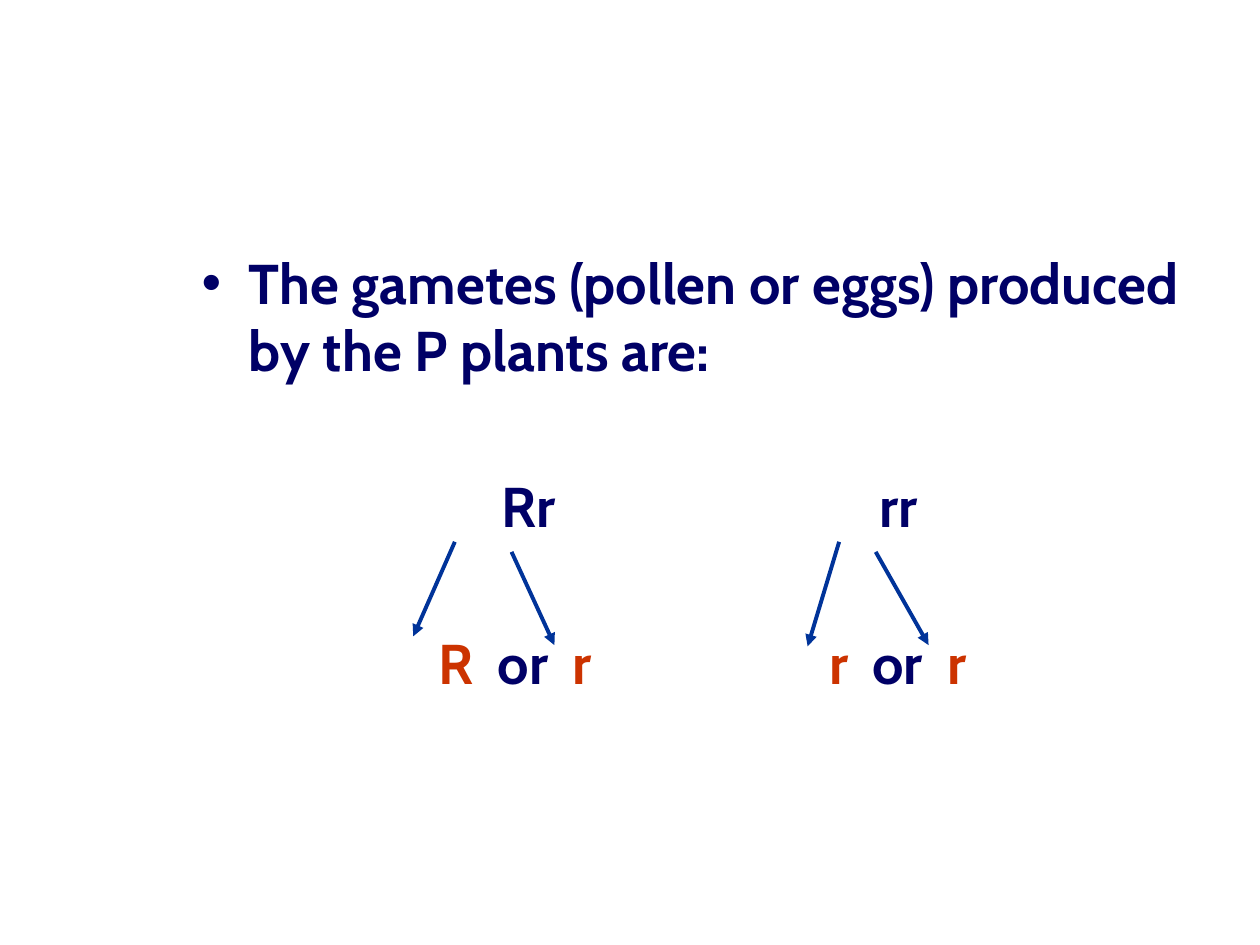
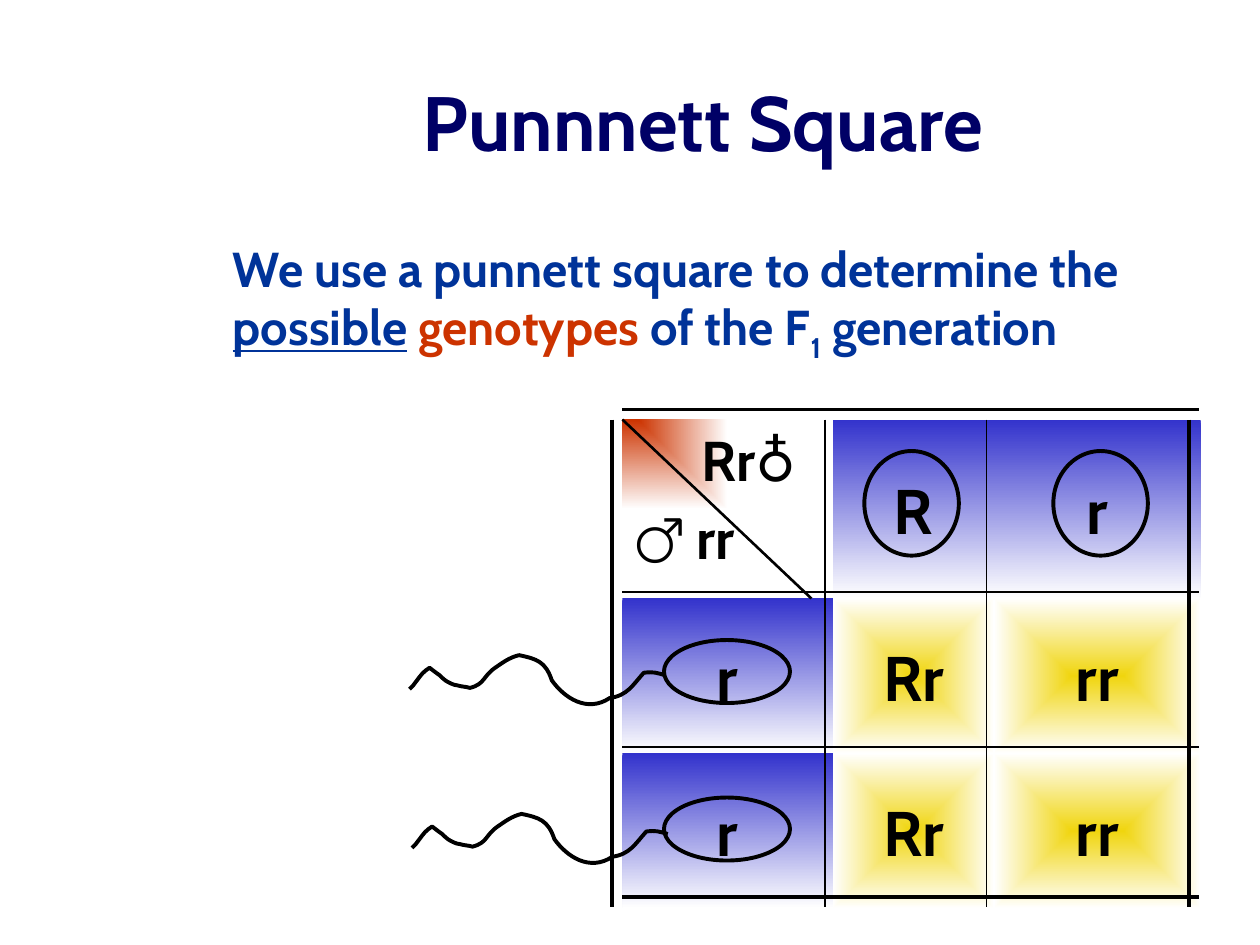
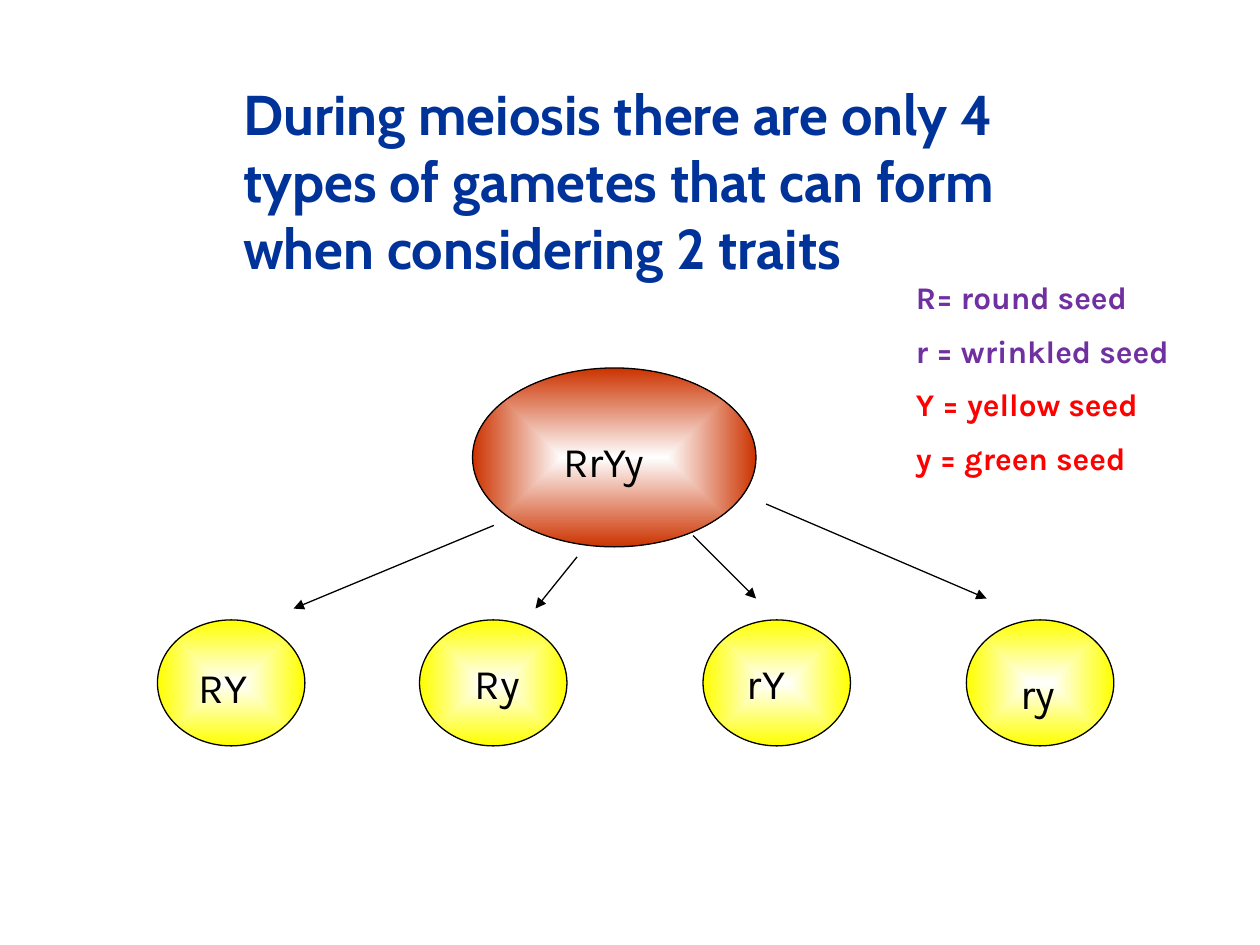
import pptx
import pptx.dml.color
import pptx.enum.shapes
import pptx.enum.text
import pptx.oxml.ns
import pptx.util
import lxml.etree

Inches = pptx.util.Inches
Pt = pptx.util.Pt
rgb = pptx.dml.color.RGBColor.from_string
qn = pptx.oxml.ns.qn
shapes_enum = pptx.enum.shapes.MSO_SHAPE
align = pptx.enum.text.PP_ALIGN
anchor = pptx.enum.text.MSO_ANCHOR
auto_size = pptx.enum.text.MSO_AUTO_SIZE

NAVY, BLUE, RUST, BLACK, WHITE = "000066", "003399", "CC3300", "000000", "FFFFFF"
INDIGO, GOLD, YELLOW, PURPLE, RED = "3333CC", "F0D50E", "FFFF00", "7030A0", "FF0000"


def add_runs(paragraph, pieces, size, name="Cabin", bold=True):
    for text, color in pieces:
        run = paragraph.add_run()
        run.text = text
        run.font.name = name
        run.font.size = Pt(size)
        run.font.bold = bold
        run.font.color.rgb = rgb(color)


def set_gradient(shape, first, last, path=None, focus=(50, 50, 50, 50)):
    shape.fill.gradient()
    shape.fill.gradient_angle = 270
    for stop, color in zip(shape.fill.gradient_stops, (first, last)):
        stop.color.rgb = rgb(color)
    if path:
        gradient = shape._element.spPr.find(qn("a:gradFill"))
        linear = gradient.find(qn("a:lin"))
        path_element = lxml.etree.Element(qn("a:path"), path=path)
        rectangle = lxml.etree.SubElement(path_element, qn("a:fillToRect"))
        for side, percent in zip("ltrb", focus):
            rectangle.set(side, str(percent * 1000))
        gradient.replace(linear, path_element)


presentation = pptx.Presentation()
presentation.slide_width = Inches(10)
presentation.slide_height = Inches(7.5)
layouts = presentation.slide_layouts
gametes_slide = presentation.slides.add_slide(layouts[1])
punnett_slide = presentation.slides.add_slide(layouts[5])
meiosis_slide = presentation.slides.add_slide(layouts[5])

title = gametes_slide.shapes.title
title._element.getparent().remove(title._element)
body = gametes_slide.placeholders[1]
body.left, body.top, body.width, body.height = [Inches(v) for v in (1.5, 1.92, 8.5, 4.5)]
body.text_frame.auto_size = auto_size.NONE
paragraph = body.text_frame.paragraphs[0]
paragraph.space_before = Pt(0)
add_runs(paragraph, [("The gametes (pollen or eggs) produced by the P plants are:", NAVY)], 32)

space = (" ", NAVY)
genotype_rows = [
    (2.38, [("Rr" + "\t" * 6 + "rr", NAVY)]),
    (1.88, [("R", RUST), space, ("or", NAVY), space, ("r" + "\t" * 4 + " r", RUST),
            space, ("or", NAVY), space, ("r", RUST)]),
]
for indent, pieces in genotype_rows:
    paragraph = body.text_frame.add_paragraph()
    properties = paragraph._p.get_or_add_pPr()
    properties.set("marL", str(Inches(indent)))
    properties.set("indent", "0")
    lxml.etree.SubElement(properties, qn("a:buNone"))
    paragraph.space_before = Pt(51)
    add_runs(paragraph, pieces, 32)
    for run in paragraph.runs:
        if run.text == " ":
            run._r.get_or_add_rPr().set("spc", "660")

title = punnett_slide.shapes.title
title.left, title.top, title.width, title.height = [Inches(v) for v in (1.33, 0.33, 8.5, 1.25)]
title.text_frame.auto_size = auto_size.NONE
add_runs(title.text_frame.paragraphs[0], [("Punnnett Square", NAVY)], 44)

column_edges = (4.94, 6.61, 7.89, 9.53)
row_edges = (3.33, 4.75, 5.98, 7.21)
genotypes = [["", "R", "r"], ["r", "Rr", "rr"], ["r", "Rr", "rr"]]
for row, names in enumerate(genotypes):
    for column, name in enumerate(names):
        left, top = column_edges[column], row_edges[row]
        cell = punnett_slide.shapes.add_shape(
            shapes_enum.RECTANGLE, Inches(left), Inches(top),
            Inches(column_edges[column + 1] - left), Inches(row_edges[row + 1] - top))
        cell.shadow.inherit = False
        cell.line.fill.background()
        frame = cell.text_frame
        paragraph = frame.paragraphs[0]
        if name:
            frame.vertical_anchor = anchor.MIDDLE
            paragraph.alignment = align.CENTER
            add_runs(paragraph, [(name, BLACK)], 36)
            if row and column:
                set_gradient(cell, GOLD, WHITE, "shape")
            else:
                set_gradient(cell, INDIGO, WHITE)
        else:
            set_gradient(cell, RUST, WHITE, "rect", (0, 0, 100, 100))
            frame.vertical_anchor = anchor.TOP
            paragraph.alignment = align.LEFT
            paragraph._p.get_or_add_pPr().set("marL", str(Inches(0.53)))
            add_runs(paragraph, [("Rr♁", BLACK)], 32)
            paragraph = frame.add_paragraph()
            paragraph.alignment = align.LEFT
            paragraph.space_before = Pt(6)
            add_runs(paragraph, [("♂ rr", BLACK)], 32)

gamete_ovals = [(6.86, 3.58, 0.75, 0.83), (8.36, 3.58, 0.75, 0.83),
                (5.27, 5.08, 1, 0.5), (5.27, 6.33, 1, 0.5)]
outlines = [punnett_slide.shapes.add_shape(shapes_enum.OVAL, *[Inches(v) for v in box])
            for box in gamete_ovals]

tail_start = (203, 16)
tail_curves = [
    [(196, 14), (194, 13), (186, 14)], [(177, 24), (173, 32), (159, 34)],
    [(141, 46), (123, 34), (113, 20)], [(108, 5), (101, 3), (87, 0)],
    [(79, 2), (74, 6), (68, 10)], [(58, 17), (60, 23), (48, 26)],
    [(45, 25), (41, 25), (38, 24)], [(35, 24), (30, 21), (30, 21)],
    [(28, 20), (25, 17), (24, 16)], [(21, 14), (16, 10), (16, 10)],
    [(11, 13), (9, 16), (6, 20)], [(5, 21), (4, 23), (3, 24)],
    [(2, 25), (0, 27), (0, 27)],
]
for left, top in [(3.25, 5.2), (3.27, 6.46)]:
    builder = punnett_slide.shapes.build_freeform(*tail_start, scale=Inches(0.01))
    builder.add_line_segments([curve[-1] for curve in tail_curves], close=False)
    tail = builder.convert_to_shape(Inches(left), Inches(top))
    tail.left, tail.top = Inches(left), Inches(top)
    segments = list(tail._element.iter(qn("a:lnTo")))
    for segment, curve in zip(segments, tail_curves):
        bezier = lxml.etree.Element(qn("a:cubicBezTo"))
        for x, y in curve:
            lxml.etree.SubElement(bezier, qn("a:pt"), x=str(x), y=str(y))
        segment.getparent().replace(segment, bezier)
    outlines.append(tail)
for outline in outlines:
    outline.shadow.inherit = False
    outline.fill.background()
    outline.line.color.rgb = rgb(BLACK)
    outline.line.width = Pt(2.25)

explanation = punnett_slide.shapes.add_textbox(Inches(1.75), Inches(1.84), Inches(7.58), Inches(1.03))
explanation.text_frame.word_wrap = True
paragraph = explanation.text_frame.paragraphs[0]
add_runs(paragraph, [("We use a punnett square to determine the ", BLUE), ("possible", BLUE),
                     (" ", BLUE), ("genotypes", RUST), (" of the F", BLUE),
                     ("1", BLUE), (" generation", BLUE)], 28)
paragraph.runs[1].font.underline = True
paragraph.runs[5]._r.get_or_add_rPr().set("baseline", "-25000")

title = meiosis_slide.shapes.title
title.left, title.top, title.width, title.height = [Inches(v) for v in (1.83, 0.58, 7.17, 1.72)]
title.text_frame.auto_size = auto_size.NONE
title.text_frame.vertical_anchor = anchor.TOP
paragraph = title.text_frame.paragraphs[0]
paragraph.alignment = align.LEFT
add_runs(paragraph, [("During meiosis there are only 4 types of gametes that can form "
                      "when considering 2 traits", BLUE)], 32)

cells = [
    ("RrYy", RUST, (3.75, 2.92, 2.25, 1.42), (4.37, 3.41, 1.25)),
    ("RY", YELLOW, (1.25, 4.92, 1.17, 1), (1.48, 5.2, 0.68)),
    ("Ry", YELLOW, (3.33, 4.92, 1.17, 1), (3.67, 5.17, 0.58)),
    ("rY", YELLOW, (5.58, 4.92, 1.17, 1), (5.83, 5.17, 0.92)),
    ("ry", YELLOW, (7.67, 4.92, 1.17, 1), (8, 5.25, 0.75)),
]
for name, color, oval_box, (left, top, width) in cells:
    oval = meiosis_slide.shapes.add_shape(shapes_enum.OVAL, *[Inches(v) for v in oval_box])
    oval.shadow.inherit = False
    set_gradient(oval, WHITE, color, "shape")
    oval.line.color.rgb = rgb(BLACK)
    oval.line.width = Pt(0.75)
    label = meiosis_slide.shapes.add_textbox(Inches(left), Inches(top), Inches(width), Inches(0.5))
    label.text_frame.word_wrap = True
    add_runs(label.text_frame.paragraphs[0], [(name, BLACK)], 24, "Karla", False)

legend = meiosis_slide.shapes.add_textbox(Inches(7.17), Inches(2.16), Inches(3), Inches(1.76))
legend.text_frame.word_wrap = True
legend.text_frame.text = "\n".join(["R= round seed", "r = wrinkled seed",
                                    "Y = yellow seed", "y = green seed"])
for index, paragraph in enumerate(legend.text_frame.paragraphs):
    paragraph.space_before = Pt(9 if index else 0)
    font = paragraph.runs[0].font
    font.name = "Karla"
    font.size = Pt(18)
    font.bold = True
    font.color.rgb = rgb(PURPLE if index < 2 else RED)

gamete_arrows = [(3.61, 4.3, 3.28, 5.05), (4.06, 4.38, 4.4, 5.12),
                 (6.66, 4.3, 6.41, 5.13), (6.95, 4.38, 7.37, 5.12)]
frame_lines = [(4.94, y, 9.52, y) for y in (3.25, 7.12)]
frame_lines += [(x, 3.33, x, 7.2) for x in (4.86, 9.44)]
inner_lines = [(4.94, y, 9.52, y) for y in (4.7, 5.93)]
inner_lines += [(x, 3.33, x, 7.2) for x in (6.55, 7.83)]
corner_diagonal = [(4.94, 3.33, 6.44, 4.75)]
meiosis_arrows = [(3.92, 4.17, 2.33, 4.83), (4.58, 4.42, 4.25, 4.83),
                  (5.5, 4.25, 6, 4.75), (6.08, 4, 7.83, 4.75)]
line_groups = [
    (gametes_slide, gamete_arrows, BLUE, 2.25, True),
    (punnett_slide, frame_lines, BLACK, 2.25, False),
    (punnett_slide, inner_lines, BLACK, 1, False),
    (punnett_slide, corner_diagonal, BLACK, 1.5, False),
    (meiosis_slide, meiosis_arrows, BLACK, 0.75, True),
]
for slide, lines, color, width, has_arrow in line_groups:
    for ends in lines:
        connector = slide.shapes.add_connector(
            pptx.enum.shapes.MSO_CONNECTOR.STRAIGHT, *[Inches(v) for v in ends])
        connector.line.color.rgb = rgb(color)
        connector.line.width = Pt(width)
        properties = connector._element.spPr
        if has_arrow:
            lxml.etree.SubElement(properties.find(qn("a:ln")), qn("a:tailEnd"), type="triangle")
        lxml.etree.SubElement(properties, qn("a:effectLst"))

presentation.save("out.pptx")
